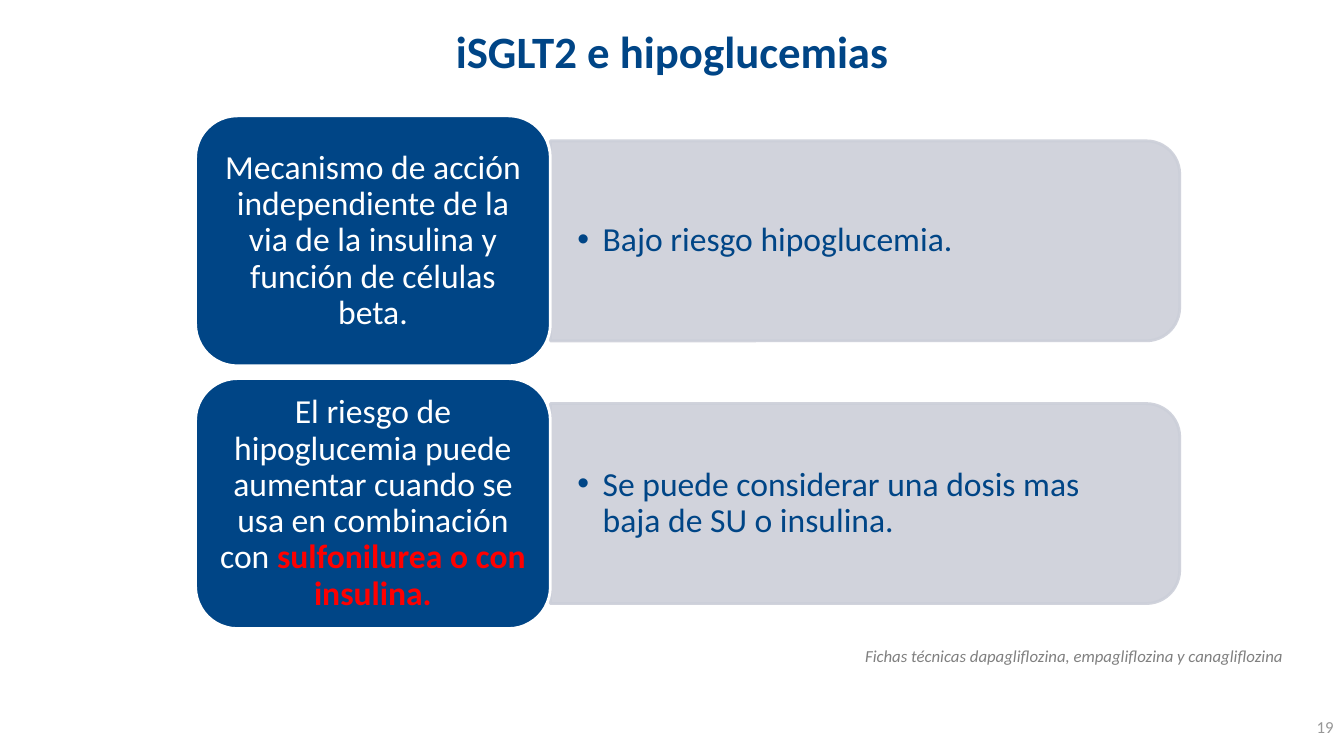
from lxml import etree
from pptx import Presentation
from pptx.dml.color import RGBColor
from pptx.enum import shapes, text
from pptx.oxml.ns import qn
from pptx.util import Cm, Pt

HUES = {"navy": "004586", "grey": "CCCFD9", "white": "FFFFFF",
        "red": "FF0000", "note": "808080", "page": "979797"}
ROWS = [
    (["Mecanismo de acción independiente de la via de la insulina y "
      "función de células beta."],
     "Bajo riesgo hipoglucemia."),
    (["El riesgo de hipoglucemia puede aumentar cuando se usa en "
      "combinación con ", "sulfonilurea o con insulina."],
     "Se puede considerar una dosis mas baja de SU o insulina."),
]
ALIGN = text.PP_ALIGN
MIDDLE = text.MSO_ANCHOR.MIDDLE


def hue(name):
    return RGBColor.from_string(HUES[name])


def style(run, size, color, bold=False, italic=False):
    font = run.font
    font.name, font.size = "Calibri", Pt(size)
    font.bold, font.italic = bold, italic
    font.color.rgb = hue(color)


def paint(shape, fill, line, alpha=None):
    """Set fill and outline; alpha is the opacity in percent."""
    shape.shadow.inherit = False
    shape.fill.solid()
    shape.fill.fore_color.rgb = hue(fill)
    shape.line.color.rgb = hue(line)
    shape.line.width = Pt(2)
    if alpha:
        for tint in shape._element.spPr.iter(qn("a:srgbClr")):
            etree.SubElement(tint, qn("a:alpha"), val=str(alpha * 1000))


def title(slide, left, top, width, height):
    head = slide.shapes.title
    head.left, head.top, head.width, head.height = left, top, width, height
    frame = head.text_frame
    frame.text = "iSGLT2 e hipoglucemias"
    frame.vertical_anchor = MIDDLE
    para = frame.paragraphs[0]
    para.alignment = ALIGN.CENTER
    style(para.runs[0], 32, "navy", bold=True)


def label(slide, words, color, left, top, width, height, italic=False):
    """Place a small right-aligned line of text."""
    frame = slide.shapes.add_textbox(left, top, width, height).text_frame
    frame.word_wrap = True
    frame.vertical_anchor = MIDDLE
    frame.text = words
    para = frame.paragraphs[0]
    para.alignment = ALIGN.RIGHT
    style(para.runs[0], 12, color, italic=italic)


def panel(slide, words, left, top, width, height):
    """Place a grey panel, rounded on its right, with one bullet."""
    # The preset is rounded on top, so it is laid out upright and turned.
    back = slide.shapes.add_shape(
        shapes.MSO_SHAPE.ROUND_2_SAME_RECTANGLE,
        left + (width - height) // 2, top + (height - width) // 2,
        height, width)
    back.rotation = 90
    paint(back, "grey", "grey", alpha=90)

    frame = slide.shapes.add_textbox(
        left, top, width - Cm(0.4), height).text_frame
    frame.word_wrap = True
    frame.vertical_anchor = MIDDLE
    frame.margin_left = frame.margin_right = Cm(0.68)
    frame.text = words
    para = frame.paragraphs[0]
    para.line_spacing = 0.9
    props = para._p.get_or_add_pPr()
    props.set("marL", str(Cm(0.64)))
    props.set("indent", str(-Cm(0.64)))
    etree.SubElement(props, qn("a:buFont"), typeface="Arial")
    etree.SubElement(props, qn("a:buChar"), char="•")
    style(para.runs[0], 24, "navy")


def card(slide, parts, left, top, width, height):
    """Place a blue card; a second part of its text is stressed in red."""
    box = slide.shapes.add_shape(
        shapes.MSO_SHAPE.ROUNDED_RECTANGLE, left, top, width, height)
    paint(box, "navy", "white")
    frame = box.text_frame
    frame.word_wrap = True
    frame.vertical_anchor = MIDDLE
    para = frame.paragraphs[0]
    para.alignment = ALIGN.CENTER
    para.line_spacing = 0.9
    for i, part in enumerate(parts):
        run = para.add_run()
        run.text = part
        style(run, 24, "red" if i else "white", bold=i > 0)


def row(slide, parts, words, left, top, width, height):
    side, inset = Cm(8.94), Cm(0.63)
    panel(slide, words, left + side, top + inset,
          width - side, height - 2 * inset)
    card(slide, parts, left, top, side, height)


def main():
    deck = Presentation()
    deck.slide_width, deck.slide_height = Cm(33.87), Cm(19.05)
    slide = deck.slides.add_slide(deck.slide_layouts[5])
    title(slide, Cm(1.7), Cm(0.43), Cm(30.48), Cm(1.68))
    for i, (parts, words) in enumerate(ROWS):
        row(slide, parts, words,
            Cm(4.93), Cm(2.92) + i * Cm(6.62), Cm(24.8), Cm(6.3))
    label(slide, "Fichas técnicas dapagliflozina, empagliflozina y canagliflozina",
          "note", Cm(0.64), Cm(16.12), Cm(31.95), Cm(0.81), italic=True)
    label(slide, "19", "page", Cm(25.96), Cm(17.8), Cm(7.9), Cm(1.02))
    deck.save("out.pptx")


if __name__ == "__main__":
    main()
